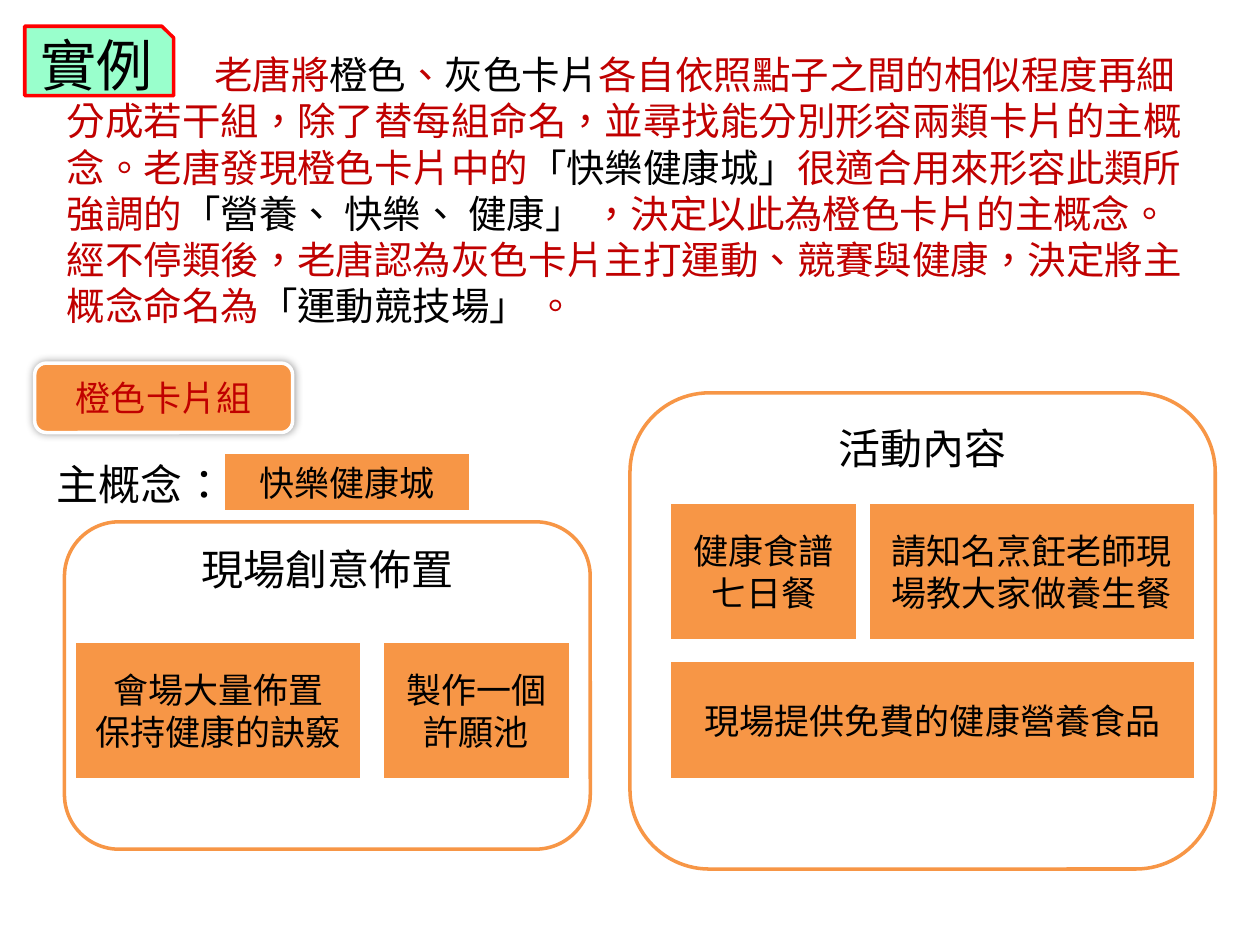
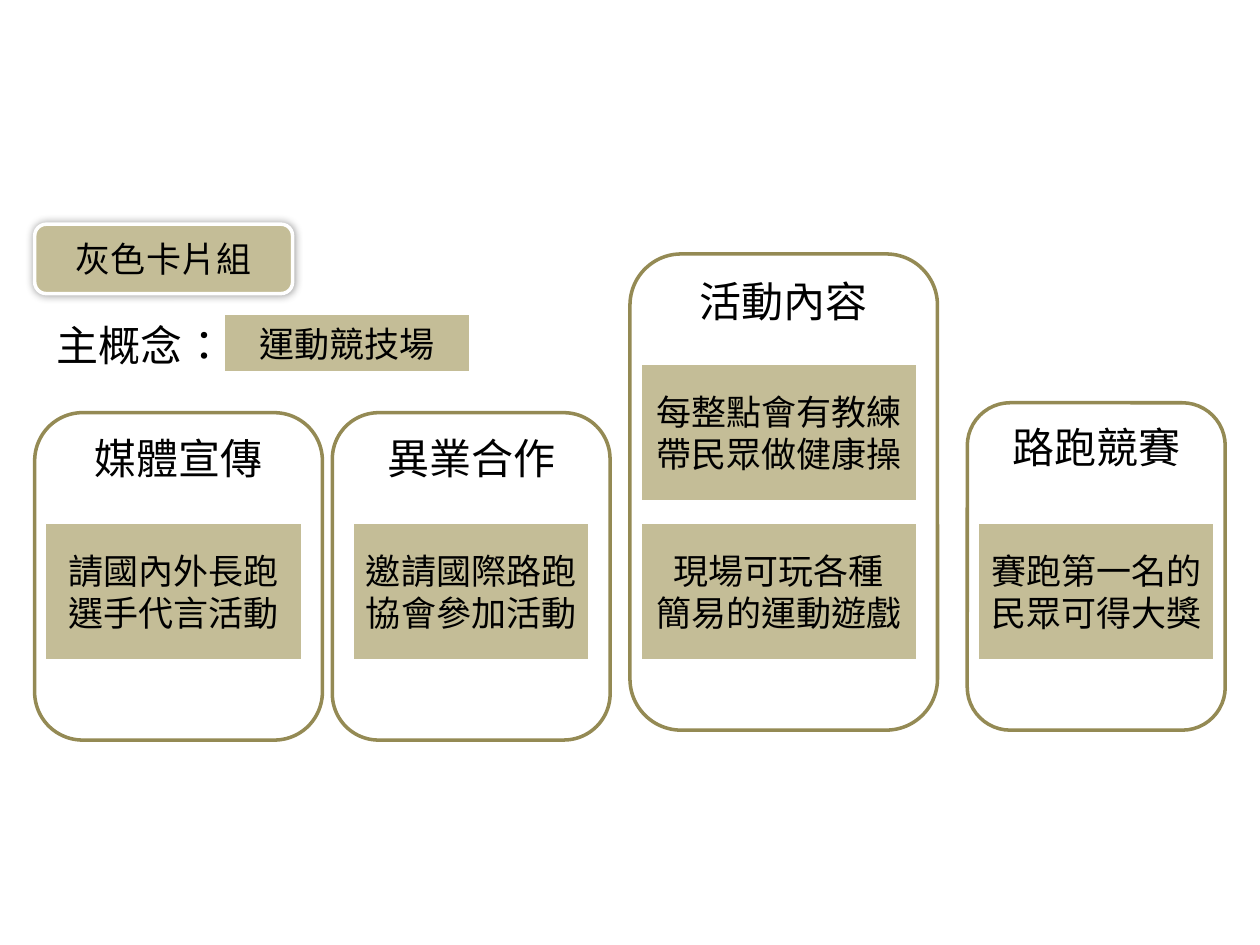
from dataclasses import dataclass

from lxml import etree
from pptx import Presentation
from pptx import util as u
from pptx.dml.color import RGBColor
from pptx.enum import shapes, text
from pptx.oxml.ns import qn

SHAPE = shapes.MSO_SHAPE
ALIGN = text.PP_ALIGN
ANCHOR = text.MSO_ANCHOR


@dataclass(frozen=True)
class Theme:
    font: str = "Calibri"
    tag_font: str = "Noto Sans CJK SC"
    language: str = "zh-TW"
    black: str = "000000"
    red: str = "C00000"
    white: str = "FFFFFF"
    tag_fill: str = "99FFCC"
    tag_line: str = "FF0000"
    orange: str = "F79646"
    grey: str = "C4BD97"
    dark_grey: str = "948A54"
    tag_size: int = 32
    heading_size: int = 24
    story_size: int = 22
    card_size: int = 20
    line_width: int = 2


THEME = Theme()


def write(box, lines, size, color=THEME.black, font=THEME.font,
          align=ALIGN.CENTER, anchor=ANCHOR.MIDDLE, indent=0):
    """Fill a box; a line is a string or a list of (string, colour) spans."""
    frame = box.text_frame
    frame.word_wrap = True
    frame.vertical_anchor = anchor
    for number, line in enumerate(lines):
        para = frame.add_paragraph() if number else frame.paragraphs[0]
        para.alignment = align
        if indent:
            para._p.get_or_add_pPr().set("indent", str(u.Cm(indent)))
        spans = [(line, color)] if isinstance(line, str) else line
        for words, span_color in spans:
            span = para.add_run()
            span.text = words
            span.font.name = font
            span.font.size = u.Pt(size)
            span.font.color.rgb = RGBColor.from_string(span_color)
            span._r.get_or_add_rPr().set("lang", THEME.language)


def add_glow(box):
    """Put a soft, centred shadow behind a box."""
    effects = box._element.spPr.find(qn("a:effectLst"))
    shadow = etree.SubElement(effects, qn("a:outerShdw"), blurRad=str(u.Pt(5)),
                              dist="0", dir="0", rotWithShape="0")
    color = etree.SubElement(shadow, qn("a:srgbClr"), val=THEME.black)
    etree.SubElement(color, qn("a:alpha"), val="40000")


class CardBoard:
    """Draws card groups on the current slide; all places are in cm."""

    def __init__(self, deck):
        self.deck = deck
        self.page = None
        self.fill = self.outline = None

    def new_page(self, fill, outline):
        self.page = self.deck.slides.add_slide(self.deck.slide_layouts[6])
        self.fill, self.outline = fill, outline

    def shape(self, kind, place, fill, line):
        box = self.page.shapes.add_shape(kind, *map(u.Cm, place))
        box.shadow.inherit = False
        if fill:
            box.fill.solid()
            box.fill.fore_color.rgb = RGBColor.from_string(fill)
        else:
            box.fill.background()
        box.line.color.rgb = RGBColor.from_string(line)
        box.line.width = u.Pt(THEME.line_width)
        return box

    def text_box(self, place, lines, **style):
        box = self.page.shapes.add_textbox(*map(u.Cm, place))
        write(box, lines, align=ALIGN.LEFT, anchor=ANCHOR.TOP, **style)

    def tag(self, place, words):
        box = self.shape(SHAPE.SNIP_1_RECTANGLE, place, THEME.tag_fill, THEME.tag_line)
        write(box, [words], THEME.tag_size, font=THEME.tag_font)

    def card(self, place, *lines):
        box = self.shape(SHAPE.RECTANGLE, place, self.fill, THEME.white)
        write(box, lines, THEME.card_size)

    def panel(self, place, heading):
        box = self.shape(SHAPE.ROUNDED_RECTANGLE, place, None, self.outline)
        write(box, [heading], THEME.heading_size, anchor=ANCHOR.TOP)

    def group_header(self, top, name, concept, name_color=THEME.black):
        badge = self.shape(SHAPE.ROUNDED_RECTANGLE, (0.7, top, 5.2, 1.4),
                           self.fill, THEME.white)
        add_glow(badge)
        write(badge, [name], THEME.card_size, color=name_color)
        self.text_box((0.9, top + 1.8, 7.8, 1.27), ["主概念："], size=THEME.heading_size)
        self.card((4.5, top + 1.8, 5, 1.2), concept)


def orange_cards(board):
    board.new_page(THEME.orange, THEME.orange)
    board.tag((0.5, 0.53, 3, 1.4), "實例")
    story = [
        ("老唐將", THEME.red),
        ("橙色", THEME.black),
        ("、", THEME.red),
        ("灰色卡片", THEME.black),
        ("各自依照點子之間的相似程度再細分成若干組，除了替每組命名，"
         "並尋找能分別形容兩類卡片的主概念。老唐發現橙色卡片中的", THEME.red),
        ("「快樂健康城」", THEME.black),
        ("很適合用來形容此類所強調的", THEME.red),
        ("「營養、 快樂、 健康」 ", THEME.black),
        ("，決定以此為橙色卡片的主概念。經不停類後，"
         "老唐認為灰色卡片主打運動、競賽與健康，決定將主概念命名為", THEME.red),
        ("「運動競技場」 ", THEME.black),
        ("。", THEME.red),
    ]
    board.text_box((1.1, 0.91, 23.2, 5.9), [story], size=THEME.story_size, indent=2.97)
    board.group_header(7.32, "橙色卡片組", "快樂健康城", name_color=THEME.red)

    board.panel((1.3, 10.52, 10.6, 6.6), "現場創意佈置")
    board.card((1.5, 12.92, 5.8, 2.8), "會場大量佈置", "保持健康的訣竅")
    board.card((7.7, 12.92, 3.8, 2.8), "製作一個", "許願池")

    board.panel((12.7, 7.92, 11.8, 9.6), "活動內容")
    board.card((13.5, 10.12, 3.8, 2.8), "健康食譜", "七日餐")
    board.card((17.5, 10.12, 6.6, 2.8), "請知名烹飪老師現場教大家做養生餐")
    board.card((13.5, 13.32, 10.6, 2.4), "現場提供免費的健康營養食品")


def grey_cards(board):
    board.new_page(THEME.grey, THEME.dark_grey)
    board.group_header(4.52, "灰色卡片組", "運動競技場")
    upper_row, lower_row, card_height = 7.32, 10.52, 2.8

    panels = [
        ("媒體宣傳", (0.7, 8.32, 5.8, 6.6)),
        ("異業合作", (6.7, 8.32, 5.6, 6.6)),
        ("活動內容", (12.7, 5.12, 6.2, 9.6)),
        ("路跑競賽", (19.5, 8.12, 5.2, 6.6)),
    ]
    for heading, place in panels:
        board.panel(place, heading)

    cards = [
        (0.9, lower_row, 5.2, ["請國內外長跑", "選手代言活動"]),
        (7.1, lower_row, 4.8, ["邀請國際路跑", "協會參加活動"]),
        (12.9, upper_row, 5.6, ["每整點會有教練帶民眾做健康操"]),
        (12.9, lower_row, 5.6, ["現場可玩各種", "簡易的運動遊戲"]),
        (19.7, lower_row, 4.8, ["賽跑第一名的民眾可得大獎"]),
    ]
    for left, top, width, lines in cards:
        board.card((left, top, width, card_height), *lines)


def main():
    deck = Presentation()
    deck.slide_width, deck.slide_height = u.Cm(25.4), u.Cm(19.05)
    board = CardBoard(deck)
    orange_cards(board)
    grey_cards(board)
    deck.save("out.pptx")


if __name__ == "__main__":
    main()
